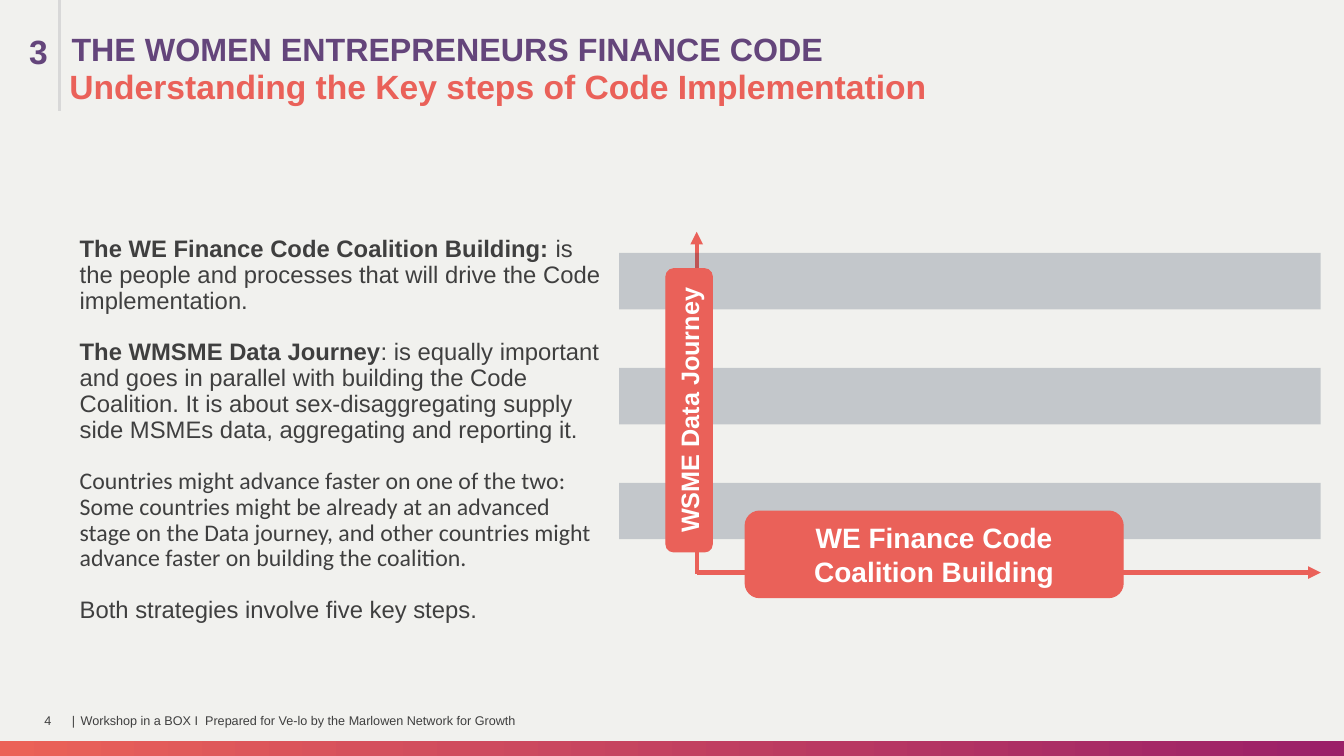
import pptx
import pptx.util
import pptx.dml.color
import pptx.enum.dml
import pptx.enum.shapes
import pptx.enum.text
import pptx.oxml
import pptx.oxml.ns

PX = 9144  # 100 px to the inch
CORAL, PURPLE, INK, NAVY = "EA6159", "64457B", "3F3F3F", "0F2341"
WHITE, GREY, PAPER = "FFFFFF", "D8D8D8", "F1F1EE"
KIND = pptx.enum.shapes.MSO_SHAPE
ALIGN = pptx.enum.text.PP_ALIGN
ANCHOR = pptx.enum.text.MSO_ANCHOR

BODY = [
    [("The WE Finance Code Coalition Building: ", True, "Arial"),
     ("is the people and processes that will drive the Code implementation.", False, "Arial")],
    [("The WMSME Data Journey", True, "Arial"),
     (": is equally important and goes in parallel with building the Code Coalition. "
      "It is about sex-disaggregating supply side MSMEs data, aggregating and reporting it.",
      False, "Arial")],
    [("Countries might advance faster on one of the two: Some countries might be already "
      "at an advanced stage on the Data journey, and other countries might advance faster "
      "on building the coalition.", False, "Calibri")],
    [("Both strategies involve five key steps.", False, "Arial")],
]


def px(n):
    return pptx.util.Emu(n * PX)


def paint(fill, color):
    fill.solid()
    fill.fore_color.rgb = pptx.dml.color.RGBColor.from_string(color)


def node(parent, tag, **attrs):
    """Append an empty drawing element with the given attributes."""
    item = pptx.oxml.parse_xml(f"<a:{tag} {pptx.oxml.ns.nsdecls('a')}/>")
    for key, value in attrs.items():
        item.set(key, str(value))
    parent.append(item)


def place(shape, box):
    shape.left, shape.top, shape.width, shape.height = map(px, box)


def write(para, text, size, color, bold=False, font="Arial"):
    run = para.add_run()
    run.text = text
    run.font.size = pptx.util.Pt(size)
    run.font.bold = bold
    run.font.name = font
    paint(run.font.fill, color)


def frame(shape, anchor=ANCHOR.TOP, tight=False):
    """Fix wrapping, size, anchor and margins; return the first paragraph."""
    text = shape.text_frame
    text.word_wrap = True
    text.auto_size = pptx.enum.text.MSO_AUTO_SIZE.NONE
    text.vertical_anchor = anchor
    if tight:
        text.margin_left = text.margin_right = text.margin_top = text.margin_bottom = 0
    return text.paragraphs[0]


def indent(para, left):
    props = para._p.get_or_add_pPr()
    props.set("marL", str(px(left)))
    props.set("indent", "0")


def label(slide, box, text, size, color, left=0):
    """Bold heading text."""
    para = frame(slide.shapes.add_textbox(*map(px, box)))
    indent(para, left)
    write(para, text, size, color, True)


def note(slide, box, text, align=ALIGN.LEFT):
    """Small footer text."""
    para = frame(slide.shapes.add_textbox(*map(px, box)), ANCHOR.MIDDLE, True)
    para.alignment = align
    write(para, text, 9, INK)


def title(slide, box, text):
    shape = slide.shapes.title
    place(shape, box)
    para = frame(shape)
    para.alignment = ALIGN.LEFT
    indent(para, 19)
    write(para, text, 23, PURPLE, True)


def body(slide, box, paras):
    shape = slide.placeholders[1]
    place(shape, box)
    para = frame(shape)
    for i, runs in enumerate(paras):
        if i:
            para = shape.text_frame.add_paragraph()
        para.line_spacing = para.space_after = pptx.util.Pt(18.4)
        para.space_before = pptx.util.Pt(0)
        indent(para, 25)
        node(para._p.get_or_add_pPr(), "buNone")
        for text, bold, font in runs:
            write(para, text, 17, INK, bold, font)


def line(shapes, ends, color, width, arrow=False):
    kind = pptx.enum.shapes.MSO_CONNECTOR.STRAIGHT
    link = shapes.add_connector(kind, *map(px, ends))
    paint(link.line.fill, color)
    link.line.width = pptx.util.Pt(width)
    if arrow:
        node(link.line._get_or_add_ln(), "tailEnd", type="triangle")
    node(link._element.spPr, "effectLst")


def block(shapes, box, kind=KIND.RECTANGLE):
    shape = shapes.add_shape(kind, *map(px, box))
    shape.shadow.inherit = False
    shape.line.fill.background()
    return shape


def band(shapes, box):
    shape = block(shapes, box)
    paint(shape.fill, NAVY)
    tint = shape.fill._xPr.find(".//" + pptx.oxml.ns.qn("a:srgbClr"))
    node(tint, "alpha", val=20000)


def pill(shapes, box, text, size, turn=0):
    shape = block(shapes, box, KIND.ROUNDED_RECTANGLE)
    shape.rotation = turn
    paint(shape.fill, CORAL)
    paint(shape.line.fill, CORAL)
    shape.line.width = pptx.util.Pt(0.75)
    para = frame(shape, ANCHOR.MIDDLE)
    para.alignment = ALIGN.CENTER
    write(para, text, size, WHITE, True)


def strip(slide, box, colors):
    """Gradient bar along the foot of the slide."""
    fill = block(slide.shapes, box).fill
    fill.gradient()
    fill.gradient_angle = 180
    for i, (stop, color) in enumerate(zip(fill.gradient_stops, colors)):
        stop.position = i
        stop.color.rgb = pptx.dml.color.RGBColor.from_string(color)


def chart(slide):
    """The two journeys as axes over three bands."""
    shapes = slide.shapes.add_group_shape().shapes
    line(shapes, (691, 569, 691, 230), CORAL, 3, True)
    for i in range(3):
        band(shapes, (614, 251 + 114 * i, 696, 56))
    line(shapes, (691, 568, 1310, 568), CORAL, 3, True)
    pill(shapes, (739, 507, 375, 86), "WE Finance Code Coalition Building", 20)
    pill(shapes, (543, 384, 281, 46), "WSME Data Journey", 18, 270)


def main():
    deck = pptx.Presentation()
    deck.slide_width, deck.slide_height = px(1333), px(750)
    slide = deck.slides.add_slide(deck.slide_layouts[1])
    paint(slide.background.fill, PAPER)
    strip(slide, (0, 735, 1333, 15), ("9B2068", "EB6258"))
    title(slide, (42, 24, 1219, 50), "THE WOMEN ENTREPRENEURS FINANCE CODE")
    body(slide, (44, 230, 564, 402), BODY)
    chart(slide)
    label(slide, (0, 26, 90, 50), "3", 24, PURPLE, 19)
    line(slide.shapes, (59, 0, 59, 110), GREY, 2.25)
    label(slide, (59, 60, 1113, 50),
          "Understanding the Key steps of Code Implementation", 24, CORAL)
    note(slide, (44, 695, 22, 40), "4")
    note(slide, (68, 695, 10, 40), "|", ALIGN.CENTER)
    note(slide, (80, 695, 571, 40),
         "Workshop in a BOX I  Prepared for Ve-lo by the Marlowen Network for Growth")
    deck.save("out.pptx")


if __name__ == "__main__":
    main()
